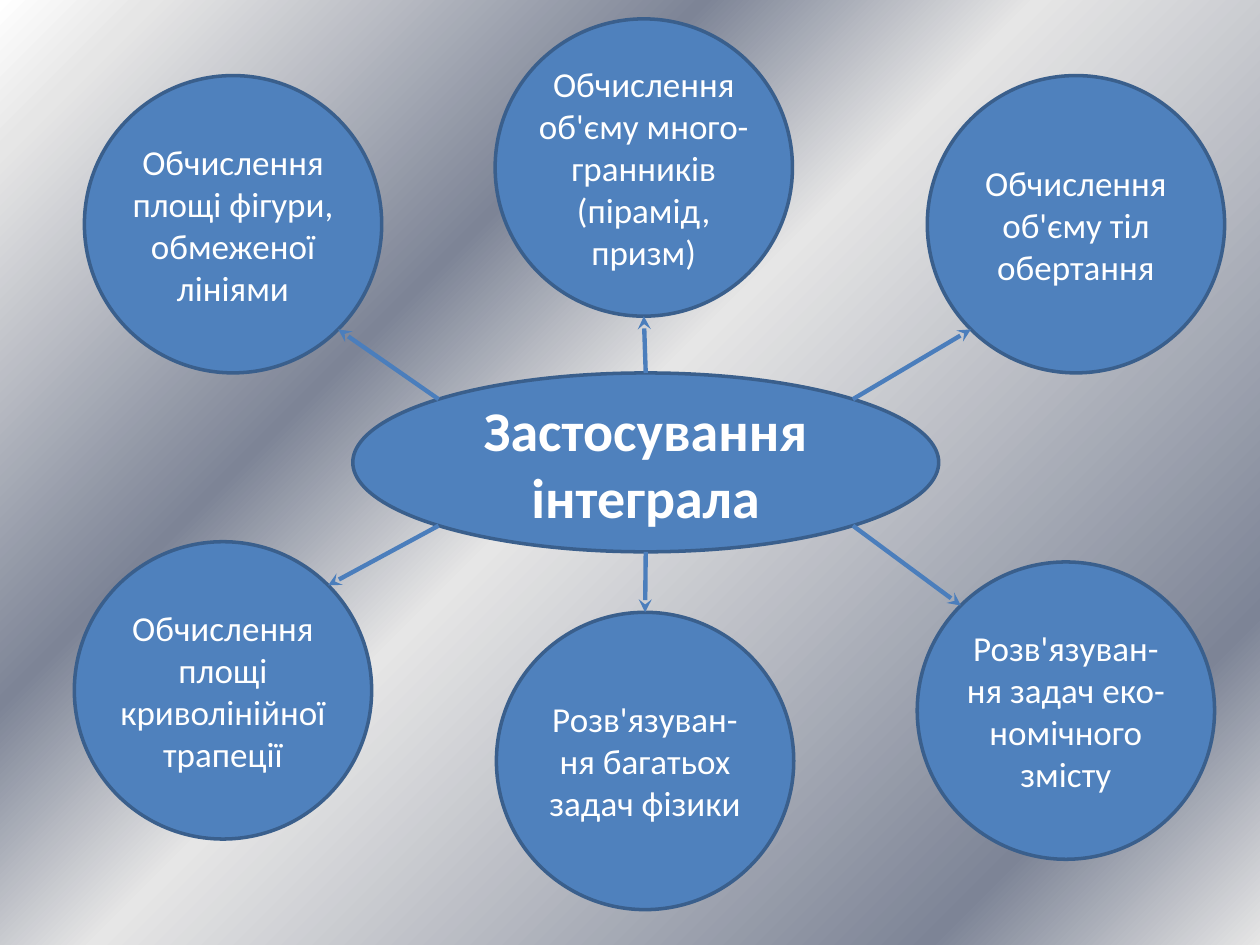
from copy import deepcopy
from math import sqrt

from pptx import Presentation, util as u
from pptx.dml.color import RGBColor
from pptx.enum import shapes, text
from pptx.oxml import ns
from lxml import etree

WIDTH, HEIGHT = u.Inches(10), u.Inches(7.5)
FONT = "Calibri"
DIAMETER = 23.6

BACKGROUND = [(0, "FFFFFF"), (7, "E6E6E6"), (32, "7D8496"),
              (47, "E6E6E6"), (85, "7D8496"), (100, "E6E6E6")]

HUB = (28, 39.47, 46.5, 18.93)

APPLICATIONS = [
    ("Обчислення площі фігури, обмеженої лініями", 6.7, 8, (-1, -1)),
    ("Обчислення об'єму много-гранників (пірамід, призм)", 39.3, 2, (0, -1)),
    ("Обчислення об'єму тіл обертання", 73.6, 8, (1, -1)),
    ("Розв'язуван-ня задач еко-номічного змісту", 72.8, 59.47, (1, 1)),
    ("Розв'язуван-ня багатьох задач фізики", 39.4, 64.8, (0, 1)),
    ("Обчислення площі криволінійної трапеції", 5.9, 57.33, (-1, 1)),
]


def color(value):
    return RGBColor.from_string(value)


def percent_box(left, top, width, height):
    return tuple(int(share * side / 100) for share, side in
                 zip((left, top, width, height), (WIDTH, HEIGHT) * 2))


def paint_background(slide):
    fill = slide.background.fill
    fill.gradient()
    fill.gradient_angle = 315
    stop_list = slide.element.find(".//" + ns.qn("a:gsLst"))
    template = stop_list[0]
    for stop in list(stop_list):
        stop_list.remove(stop)
    for position, value in BACKGROUND:
        stop = deepcopy(template)
        stop.set("pos", str(position * 1000))
        for child in list(stop):
            stop.remove(child)
        etree.SubElement(stop, ns.qn("a:srgbClr"), val=value)
        stop_list.append(stop)


def add_bubble(slide, box, label, size, bold=False, inset=None):
    shape = slide.shapes.add_shape(shapes.MSO_SHAPE.OVAL, *box)
    shape.shadow.inherit = False
    shape.fill.solid()
    shape.fill.fore_color.rgb = color("4F81BD")
    shape.line.color.rgb = color("3A5F8C")
    shape.line.width = u.Pt(2)
    frame = shape.text_frame
    frame.word_wrap = True
    frame.vertical_anchor = text.MSO_ANCHOR.MIDDLE
    if inset is not None:
        frame.margin_left = frame.margin_right = inset
        frame.margin_top = frame.margin_bottom = inset
    frame.text = label
    paragraph = frame.paragraphs[0]
    paragraph.alignment = text.PP_ALIGN.CENTER
    font = paragraph.runs[0].font
    font.name, font.size, font.bold = FONT, u.Pt(size), bold
    font.color.rgb = color("FFFFFF")
    return shape


def rim_point(shape, direction):
    across, down = direction
    length = sqrt(across ** 2 + down ** 2)
    return (int(shape.left + shape.width / 2 * (1 + across / length)),
            int(shape.top + shape.height / 2 * (1 + down / length)))


def add_arrow(slide, hub, bubble, direction):
    opposite = tuple(-step for step in direction)
    arrow = slide.shapes.add_connector(
        shapes.MSO_CONNECTOR.STRAIGHT,
        *rim_point(hub, direction), *rim_point(bubble, opposite))
    arrow.line.color.rgb = color("4B7EBC")
    arrow.line.width = u.Pt(2.5)
    etree.SubElement(arrow.line._get_or_add_ln(), ns.qn("a:tailEnd"), type="stealth")
    etree.SubElement(arrow._element.spPr, ns.qn("a:effectLst"))


def add_application_map(slide):
    hub = add_bubble(slide, percent_box(*HUB), "Застосування інтеграла", 32, bold=True)
    diameter_down = DIAMETER * WIDTH / HEIGHT
    bubbles = [
        (add_bubble(slide, percent_box(left, top, DIAMETER, diameter_down),
                    label, 20, inset=0), direction)
        for label, left, top, direction in APPLICATIONS
    ]
    for bubble, direction in bubbles:
        add_arrow(slide, hub, bubble, direction)


def main():
    presentation = Presentation()
    presentation.slide_width, presentation.slide_height = WIDTH, HEIGHT
    slide = presentation.slides.add_slide(presentation.slide_layouts[6])
    paint_background(slide)
    add_application_map(slide)
    presentation.save("out.pptx")


if __name__ == "__main__":
    main()
